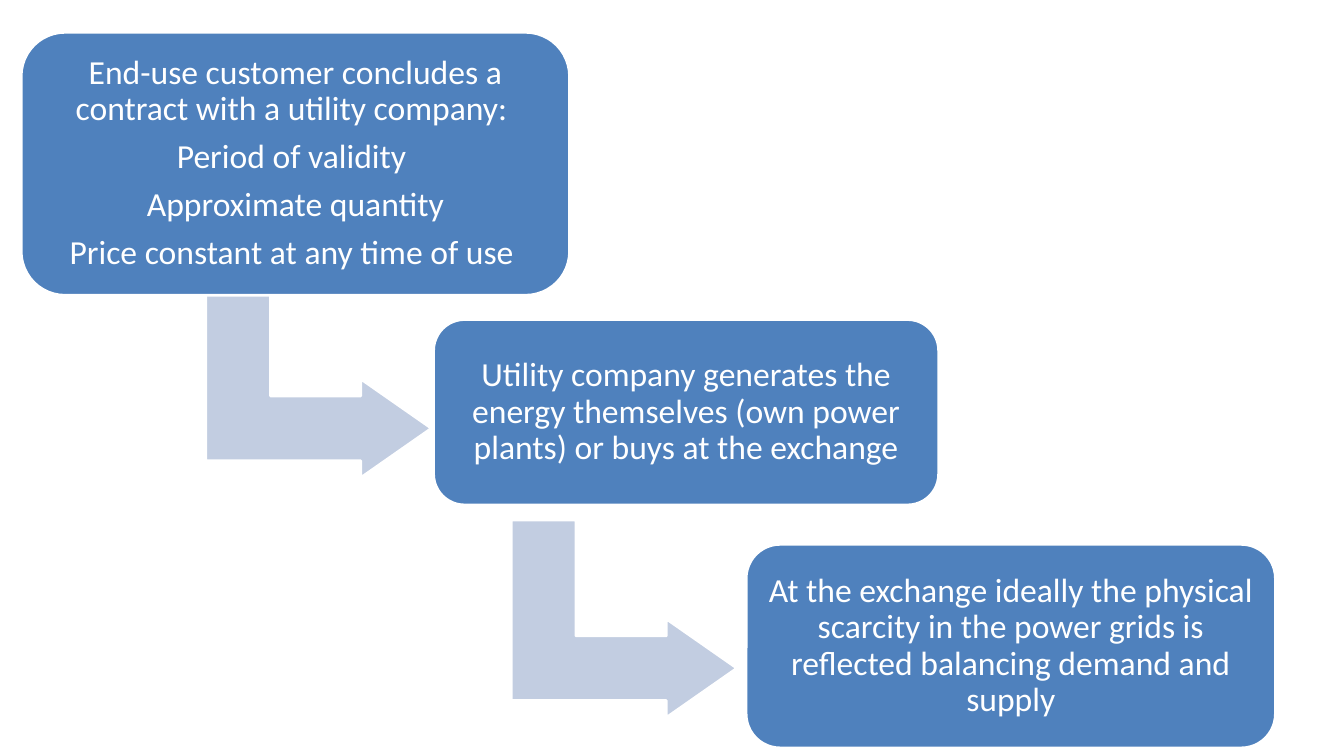
from pptx import Presentation
from pptx.dml.color import RGBColor
from pptx.enum.shapes import MSO_SHAPE
from pptx.enum.text import MSO_ANCHOR, PP_ALIGN
from pptx.util import Pt

PX = 9144  # EMU; 100 px to the inch
BLUE = RGBColor(0x4F, 0x81, 0xBD)
PALE_BLUE = RGBColor(0xC2, 0xCD, 0xE1)
WHITE = RGBColor(0xFF, 0xFF, 0xFF)

ARROW_WIDTH, ARROW_HEIGHT = 224, 196
CONTRACT = [
    "End-use customer concludes a contract with a utility company: ",
    "Period of validity ",
    "Approximate quantity",
    "Price constant at any time of use ",
]
SUPPLY = ["Utility company generates the energy themselves "
          "(own power plants) or buys at the exchange"]
EXCHANGE = ["At the exchange ideally the physical scarcity in the power grids "
            "is reflected balancing demand and supply"]

# Box of each step, its paragraphs, and the corner of the arrow leaving it
STEPS = [
    ((21, 32, 544, 261), CONTRACT, (204, 278)),
    ((430, 317, 501, 184), SUPPLY, (507, 516)),
    ((740, 540, 525, 202), EXCHANGE, None),
]


def add_outlined_shape(page, kind, box, fill, adjustments):
    shape = page.shapes.add_shape(kind, *(length * PX for length in box))
    shape.shadow.inherit = False
    shape.fill.solid()
    shape.fill.fore_color.rgb = fill
    shape.line.color.rgb = WHITE
    shape.line.width = Pt(2)
    for index, value in enumerate(adjustments):
        shape.adjustments[index] = value
    return shape


def write_paragraphs(frame, texts, size, color, font="Calibri", inset=10):
    frame.word_wrap = True
    frame.vertical_anchor = MSO_ANCHOR.MIDDLE
    frame.margin_left = frame.margin_right = inset * PX
    frame.margin_top = frame.margin_bottom = inset * PX
    for index, text in enumerate(texts):
        para = frame.add_paragraph() if index else frame.paragraphs[0]
        para.alignment = PP_ALIGN.CENTER
        para.line_spacing = 0.9
        para.space_after = Pt(0.35 * size)
        span = para.add_run()
        span.text = text
        span.font.name = font
        span.font.size = Pt(size)
        span.font.color.rgb = color


def add_step_arrow(page, left, top):
    """Draw a down-then-right arrow whose turned outline starts at left, top."""
    shift = (ARROW_WIDTH - ARROW_HEIGHT) // 2
    box = (left + shift, top - shift, ARROW_HEIGHT, ARROW_WIDTH)
    arrow = add_outlined_shape(page, MSO_SHAPE.BENT_UP_ARROW, box, PALE_BLUE,
                               (0.328, 0.25, 0.358))
    arrow.rotation = 90


def add_step(page, box, texts, arrow_corner):
    if arrow_corner:
        add_step_arrow(page, *arrow_corner)
    step = add_outlined_shape(page, MSO_SHAPE.ROUNDED_RECTANGLE, box, BLUE, (0.167,))
    write_paragraphs(step.text_frame, texts, size=24, color=WHITE)


def main():
    deck = Presentation()
    deck.slide_width, deck.slide_height = 1333 * PX, 750 * PX
    page = deck.slides.add_slide(deck.slide_layouts[6])
    for box, texts, arrow_corner in STEPS:
        add_step(page, box, texts, arrow_corner)
    deck.save("out.pptx")


if __name__ == "__main__":
    main()
